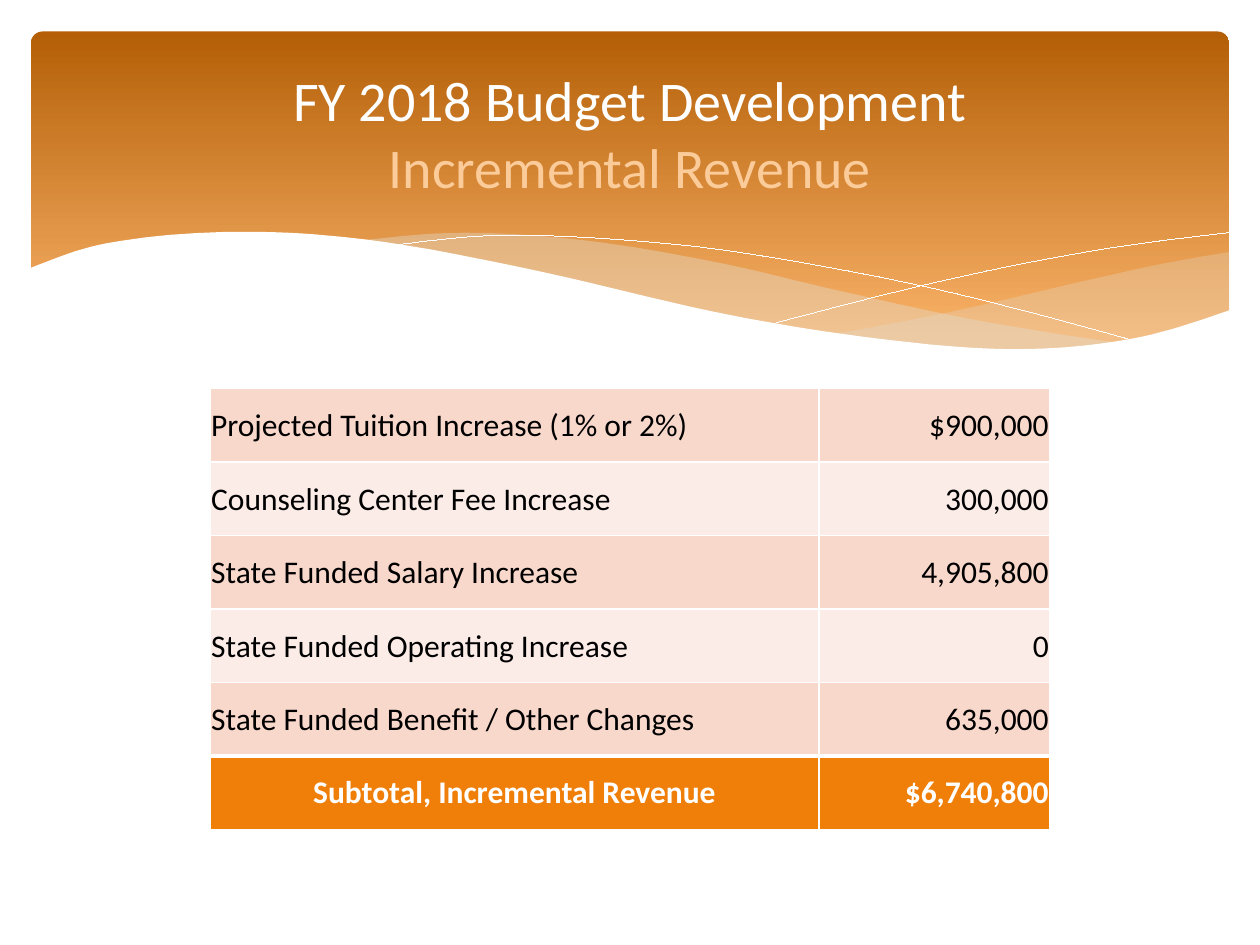
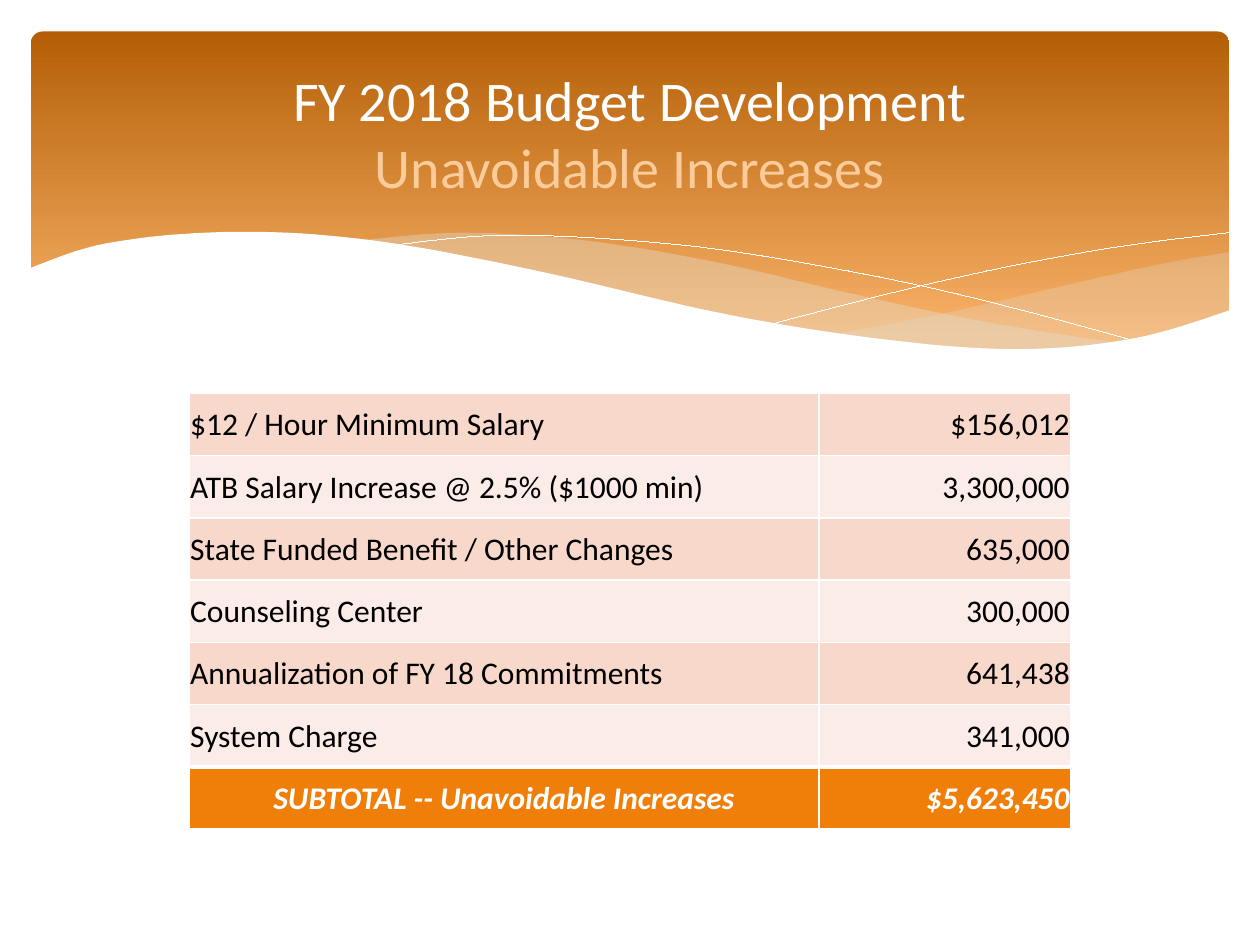
from lxml.etree import SubElement
from pptx import Presentation
from pptx.dml.color import RGBColor
from pptx.enum.shapes import MSO_SHAPE
from pptx.enum.text import MSO_ANCHOR, MSO_AUTO_SIZE, PP_ALIGN
from pptx.oxml.ns import qn
from pptx.util import Pt

WHITE = RGBColor(0xFF, 0xFF, 0xFF)
BLACK = RGBColor(0x00, 0x00, 0x00)
DARK_ORANGE = RGBColor(0xB4, 0x5F, 0x07)
LIGHT_ORANGE = RGBColor(0xF9, 0xB2, 0x68)
PEACH = RGBColor(0xFB, 0xCC, 0x9A)
SAND = RGBColor(0xE3, 0xDE, 0xD1)
TOTAL_FILL = RGBColor(0xF0, 0x7F, 0x09)
ROW_FILLS = [RGBColor(0xF9, 0xD8, 0xCC), RGBColor(0xFC, 0xEC, 0xE7)]
FONT = "Calibri"

# Layout, in points
SLIDE_WIDTH, SLIDE_HEIGHT = 720, 540
BAND_TOP, BAND_WIDTH, BAND_HEIGHT = 18, 684.7, 194.4
HAZE_FLOOR = 200  # the white wave hides the lower part of each haze
WAVE_FLOOR = 237
TABLE_BOTTOM = 474
THIN, THICK = 1, 3  # cell borders

# Each curve runs from left to right through a few knots (x, y)
RIGHT_HAZE = [(476, 191), (542, 178.5), (620, 160.5), (663, 151), (702.7, 144)]
LEFT_HAZE = [(206, 137.5), (266, 133), (335, 137.5), (410, 150), (481, 166.5),
             (558, 183), (643, 196.5)]
FALLING_LINE = [(222.5, 140.5), (289, 134.5), (384, 139.5), (458, 150),
                (547, 168), (653, 196)]
RISING_LINE = [(441.5, 185), (538.5, 160.5), (623.5, 143.5), (702, 133)]
WHITE_WAVE = [(16.6, 153.5), (61, 139), (134, 132.5), (210, 137), (301, 153.5),
              (417, 180), (510, 194.5), (582.5, 199.5), (647, 193.5), (703.4, 177)]

# Subtitle, column widths, row height, italic total, rows (the last is the total)
SLIDES = [
    ("Incremental Revenue", (348, 132), 42, False, [
        ("Projected Tuition Increase (1% or 2%)", "$900,000"),
        ("Counseling Center Fee Increase", "300,000"),
        ("State Funded Salary Increase", "4,905,800"),
        ("State Funded Operating Increase", "0"),
        ("State Funded Benefit / Other Changes", "635,000"),
        ("Subtotal, Incremental Revenue", "$6,740,800"),
    ]),
    ("Unavoidable Increases", (360, 144), 35.6, True, [
        ("$12 / Hour Minimum Salary", "$156,012"),
        ("ATB Salary Increase @ 2.5% ($1000 min)", "3,300,000"),
        ("State Funded Benefit / Other Changes", "635,000"),
        ("Counseling Center", "300,000"),
        ("Annualization of FY 18 Commitments", "641,438"),
        ("System Charge", "341,000"),
        ("SUBTOTAL -- Unavoidable Increases", "$5,623,450"),
    ]),
]


def smooth_curve(knots, steps=10):
    """Return points on a cubic curve that passes through all knots."""
    def slope(a, b):
        return (b[1] - a[1]) / (b[0] - a[0])

    # Inside, a knot's slope is that between its neighbours; ends are extrapolated
    inner = [slope(a, b) for a, b in zip(knots, knots[2:])]
    first = 1.5 * slope(knots[0], knots[1]) - 0.5 * inner[0]
    last = 1.5 * slope(knots[-2], knots[-1]) - 0.5 * inner[-1]
    slopes = [first, *inner, last]

    points = [knots[0]]
    for (x0, y0), (x1, y1), m0, m1 in zip(knots, knots[1:], slopes, slopes[1:]):
        width = x1 - x0
        for step in range(1, steps + 1):
            t = step / steps
            blend = t * t * (3 - 2 * t)
            bend = width * t * (1 - t) * (m0 * (1 - t) - m1 * t)
            points.append((x0 + width * t, y0 + (y1 - y0) * blend + bend))
    return points


def add_curve(slide, knots, floor=None, color=WHITE, opacity=100):
    """Fill the area from a curve down to floor, or draw a hairline if no floor."""
    points = smooth_curve(knots)
    if floor is not None:
        points += [(knots[-1][0], floor), (knots[0][0], floor)]
    # Freeform coordinates are whole numbers, so count in tenths of a point
    start, *rest = [(x * 10, y * 10) for x, y in points]
    builder = slide.shapes.build_freeform(*start, scale=Pt(0.1))
    builder.add_line_segments(rest, close=floor is not None)
    sp = builder.convert_to_shape()
    sp.shadow.inherit = False
    if floor is None:
        sp.fill.background()
        sp.line.color.rgb = color
        sp.line.width = Pt(0.01)
    else:
        sp.line.fill.background()
        sp.fill.solid()
        sp.fill.fore_color.rgb = color
        clr = sp.element.spPr.find(qn("a:solidFill") + "/" + qn("a:srgbClr"))
        SubElement(clr, qn("a:alpha"), val=str(opacity * 1000))
    return sp


prs = Presentation()
prs.slide_width, prs.slide_height = Pt(SLIDE_WIDTH), Pt(SLIDE_HEIGHT)

# Title style and place, shared through the master and the layout
title_style = prs.slide_master.element.find(".//" + qn("p:titleStyle"))
title_style.find(".//" + qn("a:defRPr")).set("sz", "3200")
layout = prs.slide_layouts[5]
title = layout.placeholders[0]
title.left, title.top, title.width, title.height = Pt(36), Pt(26.6), Pt(648), Pt(98.6)

slides = [prs.slides.add_slide(layout) for _ in SLIDES]

# Title band, from back to front
band = slides[0].shapes.add_shape(
    MSO_SHAPE.ROUNDED_RECTANGLE, Pt((SLIDE_WIDTH - BAND_WIDTH) / 2), Pt(BAND_TOP),
    Pt(BAND_WIDTH), Pt(BAND_HEIGHT))
band.adjustments[0] = 0.034
band.shadow.inherit = False
band.line.fill.background()
band.fill.gradient()
band.fill.gradient_angle = 270
for stop, position, color in zip(
        band.fill.gradient_stops, (0, 0.9), (DARK_ORANGE, LIGHT_ORANGE)):
    stop.position = position
    stop.color.rgb = color
band_parts = [
    band,
    add_curve(slides[0], RIGHT_HAZE, HAZE_FLOOR, SAND, opacity=29),
    add_curve(slides[0], LEFT_HAZE, HAZE_FLOOR, SAND, opacity=40),
    add_curve(slides[0], FALLING_LINE),
    add_curve(slides[0], RISING_LINE),
    add_curve(slides[0], WHITE_WAVE, WAVE_FLOOR),
]
# Move the band to the layout, behind its placeholders, so all slides show it
for index, sp in enumerate(band_parts, start=2):
    layout.shapes.element.insert(index, sp.element)

for slide, (subtitle, widths, row_height, italic_total, rows) in zip(slides, SLIDES):
    tf = slide.shapes.title.text_frame
    tf.text = "FY 2018 Budget Development\v" + subtitle
    tf.auto_size = MSO_AUTO_SIZE.NONE
    tf.vertical_anchor = MSO_ANCHOR.MIDDLE
    p = tf.paragraphs[0]
    p.alignment = PP_ALIGN.CENTER
    for r, color in zip(p.runs, (WHITE, PEACH)):
        r.font.name = FONT
        r.font.size = Pt(32)
        r.font.color.rgb = color

    # The table is centred across the slide and stands on a common bottom line
    table_width, table_height = sum(widths), row_height * len(rows)
    table = slide.shapes.add_table(
        len(rows), len(widths), Pt((SLIDE_WIDTH - table_width) / 2),
        Pt(TABLE_BOTTOM - table_height), Pt(table_width), Pt(table_height)).table
    table.first_row = table.horz_banding = False
    for column, width in zip(table.columns, widths):
        column.width = Pt(width)

    total_row = len(rows) - 1
    for i, (label, amount) in enumerate(rows):
        table.rows[i].height = Pt(row_height)
        is_total = i == total_row
        row_fill = TOTAL_FILL if is_total else ROW_FILLS[i % 2]
        label_align = PP_ALIGN.CENTER if is_total else PP_ALIGN.LEFT
        borders = {
            "a:lnL": THIN,
            "a:lnR": THIN,
            "a:lnT": THICK if is_total else THIN,
            "a:lnB": THICK if i == total_row - 1 else THIN,
        }
        row_texts = [(label, label_align), (amount, PP_ALIGN.RIGHT)]
        for cell, (text, align) in zip(table.rows[i].cells, row_texts):
            cell.margin_left = cell.margin_right = cell.margin_top = Pt(0.7)
            cell.margin_bottom = Pt(0)
            cell.vertical_anchor = MSO_ANCHOR.MIDDLE
            for tag, width in borders.items():
                ln = SubElement(cell._tc.get_or_add_tcPr(), qn(tag), w=str(Pt(width)))
                SubElement(SubElement(ln, qn("a:solidFill")), qn("a:srgbClr"), val=str(WHITE))
            cell.fill.solid()
            cell.fill.fore_color.rgb = row_fill

            p = cell.text_frame.paragraphs[0]
            p.text = text
            p.alignment = align
            font = p.runs[0].font
            font.name = FONT
            font.size = Pt(18)
            font.bold = is_total
            font.italic = is_total and italic_total
            font.color.rgb = WHITE if is_total else BLACK

prs.save("out.pptx")
